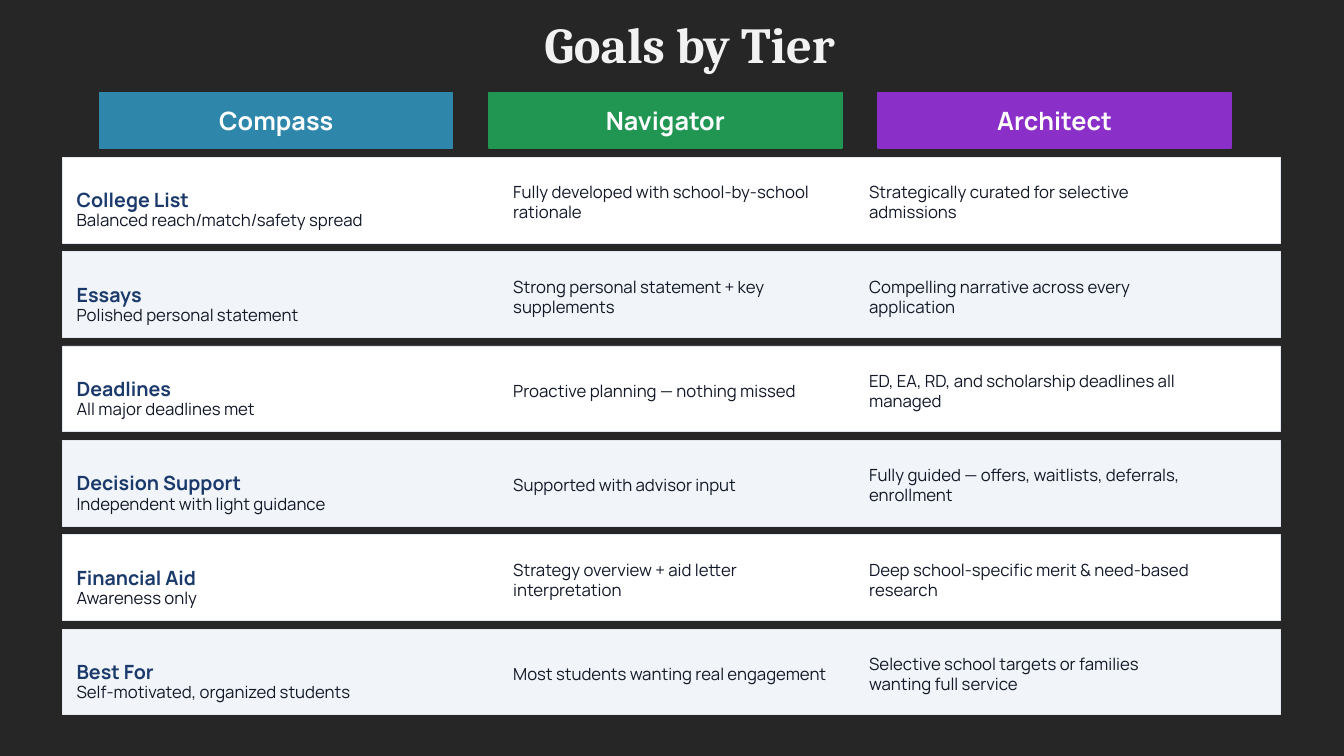
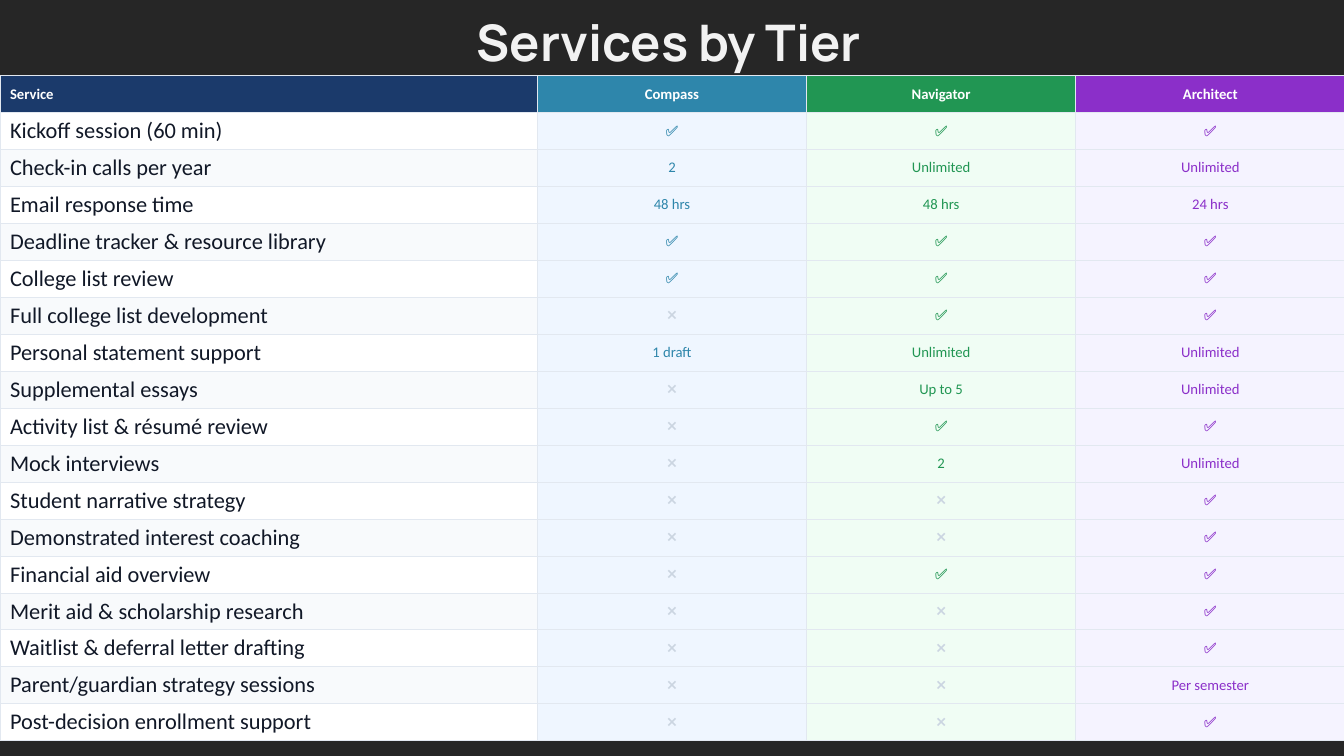
from lxml import etree
from pptx import Presentation
from pptx.dml.color import RGBColor
from pptx.enum.shapes import MSO_SHAPE
from pptx.enum.text import MSO_ANCHOR, PP_ALIGN
from pptx.oxml.ns import qn
from pptx.util import Inches, Pt

RECT = MSO_SHAPE.RECTANGLE
MIDDLE = MSO_ANCHOR.MIDDLE
LEFT, CENTER = PP_ALIGN.LEFT, PP_ALIGN.CENTER

DARK = RGBColor(0x26, 0x26, 0x26)
OFF_WHITE = RGBColor(0xF2, 0xF2, 0xF2)
WHITE = RGBColor(0xFF, 0xFF, 0xFF)
NAVY = RGBColor(0x1B, 0x3A, 0x6B)
INK = RGBColor(0x11, 0x18, 0x27)
BORDER = RGBColor(0xE2, 0xE8, 0xF0)
MUTED = RGBColor(0xCB, 0xD5, 0xE1)
BAND = RGBColor(0xF1, 0xF5, 0xF9)
TABLE_BAND = RGBColor(0xF8, 0xFA, 0xFC)
BLUE = RGBColor(0x2E, 0x86, 0xAB)
GREEN = RGBColor(0x21, 0x96, 0x53)
PURPLE = RGBColor(0x8B, 0x2F, 0xC9)
PALE_BLUE = RGBColor(0xEF, 0xF6, 0xFF)
PALE_GREEN = RGBColor(0xF0, 0xFD, 0xF4)
PALE_PURPLE = RGBColor(0xF5, 0xF3, 0xFF)

SERIF, SANS, TABLE_FONT = "Cambria", "Manrope", "Calibri"
TIERS = [
    ("Compass", BLUE, PALE_BLUE),
    ("Navigator", GREEN, PALE_GREEN),
    ("Architect", PURPLE, PALE_PURPLE),
]
YES, NO = "✅", "❌"


def set_text(tf, text, size, color, font=SANS, bold=False, align=LEFT):
    p = tf.paragraphs[0]
    p.text = text
    p.alignment = align
    p.font.size = Pt(size)
    p.font.name = font
    p.font.bold = bold
    p.font.color.rgb = color


def add_text(s, x, y, w, h, *text_style, **options):
    tf = s.shapes.add_textbox(Inches(x), Inches(y), Inches(w), Inches(h)).text_frame
    tf.word_wrap = True
    tf.vertical_anchor = MIDDLE
    tf.margin_left = tf.margin_right = tf.margin_top = tf.margin_bottom = 0
    set_text(tf, *text_style, **options)


prs = Presentation()
prs.slide_width = Inches(13.33)
prs.slide_height = Inches(7.5)
fill = prs.slide_master.background.fill
fill.solid()
fill.fore_color.rgb = DARK
blank = prs.slide_layouts[6]
title_style = dict(size=36, color=OFF_WHITE, bold=True, align=CENTER)

s = prs.slides.add_slide(blank)
add_text(s, 0.35, 0.18, 12.98, 0.5, "Goals by Tier", font=SERIF, **title_style)

for i, (tier, color, _) in enumerate(TIERS):
    sp = s.shapes.add_shape(RECT, Inches(0.99 + i * 3.86), Inches(0.92), Inches(3.5), Inches(0.55))
    sp.shadow.inherit = False
    sp.fill.solid()
    sp.fill.fore_color.rgb = color
    sp.line.color.rgb = color
    sp.line.width = Pt(1)
    sp.text_frame.vertical_anchor = MIDDLE
    set_text(sp.text_frame, tier, 18, WHITE, bold=True, align=CENTER)

goals = [
    ("College List", "Balanced reach/match/safety spread",
     "Fully developed with school-by-school rationale",
     "Strategically curated for selective admissions"),
    ("Essays", "Polished personal statement",
     "Strong personal statement + key supplements",
     "Compelling narrative across every application"),
    ("Deadlines", "All major deadlines met",
     "Proactive planning — nothing missed",
     "ED, EA, RD, and scholarship deadlines all managed"),
    ("Decision Support", "Independent with light guidance",
     "Supported with advisor input",
     "Fully guided — offers, waitlists, deferrals, enrollment"),
    ("Financial Aid", "Awareness only",
     "Strategy overview + aid letter interpretation",
     "Deep school-specific merit & need-based research"),
    ("Best For", "Self-motivated, organized students",
     "Most students wanting real engagement",
     "Selective school targets or families wanting full service"),
]
first_top, last_top = 1.56, 6.24
pitch = (last_top - first_top) / (len(goals) - 1)
for i, (goal, *details) in enumerate(goals):
    top = first_top + i * pitch
    sp = s.shapes.add_shape(RECT, Inches(0.62), Inches(top), Inches(12.08), Inches(0.85))
    sp.shadow.inherit = False
    sp.fill.solid()
    sp.fill.fore_color.rgb = BAND if i % 2 else WHITE
    sp.line.color.rgb = BORDER
    sp.line.width = Pt(0.5)
    add_text(s, 0.76, top, 3.42, 0.85, goal, 14, NAVY, bold=True)
    for x, drop, detail in zip((0.76, 5.09, 8.62), (0.25, 0.07, 0.07), details):
        add_text(s, x, top + drop, 3.25, 0.75, detail, 12, INK)

s = prs.slides.add_slide(blank)
add_text(s, 0.11, 0.08, 13.05, 0.66, "Services by Tier", **title_style)

services = [
    ("Kickoff session (60 min)", YES, YES, YES),
    ("Check-in calls per year", "2", "Unlimited", "Unlimited"),
    ("Email response time", "48 hrs", "48 hrs", "24 hrs"),
    ("Deadline tracker & resource library", YES, YES, YES),
    ("College list review", YES, YES, YES),
    ("Full college list development", NO, YES, YES),
    ("Personal statement support", "1 draft", "Unlimited", "Unlimited"),
    ("Supplemental essays", NO, "Up to 5", "Unlimited"),
    ("Activity list & résumé review", NO, YES, YES),
    ("Mock interviews", NO, "2", "Unlimited"),
    ("Student narrative strategy", NO, NO, YES),
    ("Demonstrated interest coaching", NO, NO, YES),
    ("Financial aid overview", NO, YES, YES),
    ("Merit aid & scholarship research", NO, NO, YES),
    ("Waitlist & deferral letter drafting", NO, NO, YES),
    ("Parent/guardian strategy sessions", NO, NO, "Per semester"),
    ("Post-decision enrollment support", NO, NO, YES),
]
rows = [("Service", *(tier for tier, _, _ in TIERS)), *services]
header_fills = [NAVY, *(color for _, color, _ in TIERS)]
table = s.shapes.add_table(len(rows), 4, 0, Inches(0.75), Inches(13.33), Inches(6.6)).table
table.horz_banding = False
for column, width in zip(table.columns, (5.33, 2.67, 2.67, 2.67)):
    column.width = Inches(width)

for i, row in enumerate(rows):
    for j, text in enumerate(row):
        cell = table.cell(i, j)
        cell.vertical_anchor = MIDDLE
        cell.margin_top = cell.margin_bottom = Inches(0.04)
        size, color, align = 10.5, WHITE, CENTER if j else LEFT
        if i == 0:
            cell_fill = header_fills[j]
        elif j == 0:
            size, color = 16, INK
            cell_fill = WHITE if i % 2 else TABLE_BAND
        else:
            _, color, cell_fill = TIERS[j - 1]
            if text == NO:
                color = MUTED
        set_text(cell.text_frame, text, size, color, TABLE_FONT, i == 0, align)
        tcPr = cell._tc.get_or_add_tcPr()
        for side in ("a:lnL", "a:lnR", "a:lnT", "a:lnB"):
            ln = etree.SubElement(tcPr, qn(side), w=str(Pt(0.5)))
            line_fill = etree.SubElement(ln, qn("a:solidFill"))
            etree.SubElement(line_fill, qn("a:srgbClr"), val=str(BORDER))
        cell.fill.solid()
        cell.fill.fore_color.rgb = cell_fill

prs.save("out.pptx")
